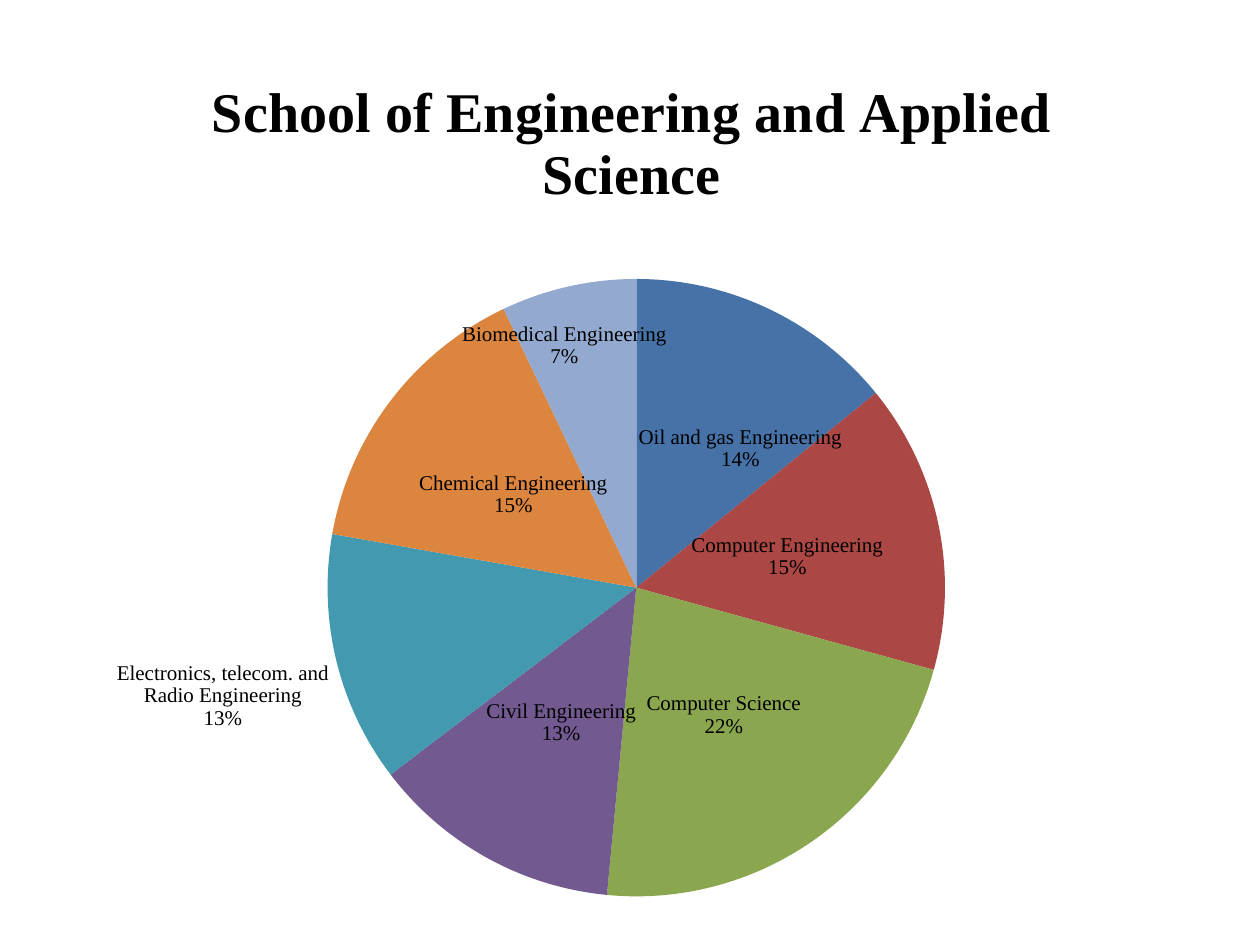
from lxml.etree import SubElement
from pptx import Presentation
from pptx.chart.data import CategoryChartData
from pptx.dml.color import RGBColor
from pptx.enum.chart import XL_CHART_TYPE, XL_LABEL_POSITION
from pptx.oxml import parse_xml
from pptx.oxml.ns import nsdecls, qn
from pptx.util import Inches, Pt

WIDTH, HEIGHT = Inches(10), Inches(7.5)
BLACK = RGBColor(0x00, 0x00, 0x00)
SERIF = "Times New Roman"
TITLE = "School of Engineering and Applied Science"
TITLE_FORMAT = {"name": SERIF, "size": Pt(32), "bold": True}
LABEL_FORMAT = {"name": SERIF, "size": Pt(12), "bold": False}

# Department, share, slice colour
DEPARTMENTS = [
    ("Oil and gas engineering", 14, RGBColor(0x46, 0x72, 0xA8)),
    ("Computer Engineering", 15, RGBColor(0xAB, 0x47, 0x44)),
    ("Computer Science", 22, RGBColor(0x8A, 0xA6, 0x4F)),
    ("Civil Engineering", 13, RGBColor(0x72, 0x59, 0x90)),
    ("Electronics, telecom. and Radio Engineering", 13, RGBColor(0x42, 0x99, 0xB0)),
    ("Chemical Engineering", 15, RGBColor(0xDC, 0x85, 0x3E)),
    ("Biomedical engineering", 7, RGBColor(0x93, 0xA9, 0xCF)),
]
# Slice number: label text, and its shift as shares of the chart's size
WRITTEN_LABELS = {
    0: ("Oil and gas Engineering\n14%", {"x": 0.03, "y": 0}),
    6: ("Biomedical Engineering\n7%", {"x": -0.03, "y": -0.1}),
}
OUTSIDE_SLICE = 4


def format_font(font, values):
    for name, value in values.items():
        setattr(font, name, value)
    font.color.rgb = BLACK


def manual_layout(**values):
    """Layout element whose values are shares of the chart's size."""
    layout = parse_xml(f"<c:layout {nsdecls('c')}><c:manualLayout/></c:layout>")
    for name, value in values.items():
        SubElement(layout[0], qn(f"c:{name}")).set("val", str(value))
    return layout


def add_pie(page):
    data = CategoryChartData()
    data.categories = [name for name, _, _ in DEPARTMENTS]
    data.add_series("Series 1", [share for _, share, _ in DEPARTMENTS])
    top = Inches(0.23)
    chart = page.shapes.add_chart(
        XL_CHART_TYPE.PIE, 0, top, WIDTH, HEIGHT - top, data).chart
    chart.has_legend = False
    format_font(chart.font, {"name": "Calibri", "size": Pt(10)})
    chart.plots[0].vary_by_categories = True
    for number, (_, _, colour) in enumerate(DEPARTMENTS):
        fill = chart.plots[0].series[0].points[number].format.fill
        fill.solid()
        fill.fore_color.rgb = colour
    # Place of the pie inside the chart
    plot_area = chart.plots[0]._element.getparent()
    for old in plot_area.findall(qn("c:layout")):
        plot_area.remove(old)
    plot_area.insert(0, manual_layout(
        layoutTarget="inner", xMode="edge", yMode="edge",
        x=0.26, y=0.27, w=0.49, h=0.68))
    return chart


def add_title(chart):
    frame = chart.chart_title.text_frame
    frame.text = TITLE
    format_font(frame.paragraphs[0].runs[0].font, TITLE_FORMAT)
    title = chart.chart_title._element
    for old in title.findall(qn("c:layout")):
        title.remove(old)
    title.find(qn("c:tx")).addnext(
        manual_layout(xMode="edge", yMode="edge", x=0.16, y=0.04))


def show_name_and_percent(element):
    """Turn on name and percentage, on lines of their own."""
    for flag, value in {"showVal": 0, "showCatName": 1, "showPercent": 1}.items():
        element.find(qn(f"c:{flag}")).set("val", str(value))
    separator = parse_xml(f"<c:separator {nsdecls('c')}>\n</c:separator>")
    last = element.find(qn("c:showBubbleSize"))
    if last is None:
        last = element.find(qn("c:showPercent"))
    last.addnext(separator)


def add_labels(series):
    labels = series.data_labels
    format_font(labels.font, LABEL_FORMAT)
    labels.position = XL_LABEL_POSITION.CENTER
    show_name_and_percent(labels._element)

    # Labels with their own wording and place
    for number, (text, shift) in WRITTEN_LABELS.items():
        label = series.points[number].data_label
        label.text_frame.text = text
        for para in label.text_frame.paragraphs:
            for span in para.runs:
                format_font(span.font, LABEL_FORMAT)
        label.position = XL_LABEL_POSITION.CENTER
        element = labels._element.findall(qn("c:dLbl"))[-1]
        show_name_and_percent(element)
        element.insert(1, manual_layout(**shift))

    # The long name stands beside the pie
    label = series.points[OUTSIDE_SLICE].data_label
    format_font(label.font, LABEL_FORMAT)
    label.position = XL_LABEL_POSITION.OUTSIDE_END
    for element in labels._element.findall(qn("c:dLbl")):
        if element.find(qn("c:idx")).get("val") == str(OUTSIDE_SLICE):
            show_name_and_percent(element)


def main():
    deck = Presentation()
    deck.slide_width, deck.slide_height = WIDTH, HEIGHT
    page = deck.slides.add_slide(deck.slide_layouts[6])
    chart = add_pie(page)
    add_title(chart)
    add_labels(chart.plots[0].series[0])
    deck.save("out.pptx")


if __name__ == "__main__":
    main()
